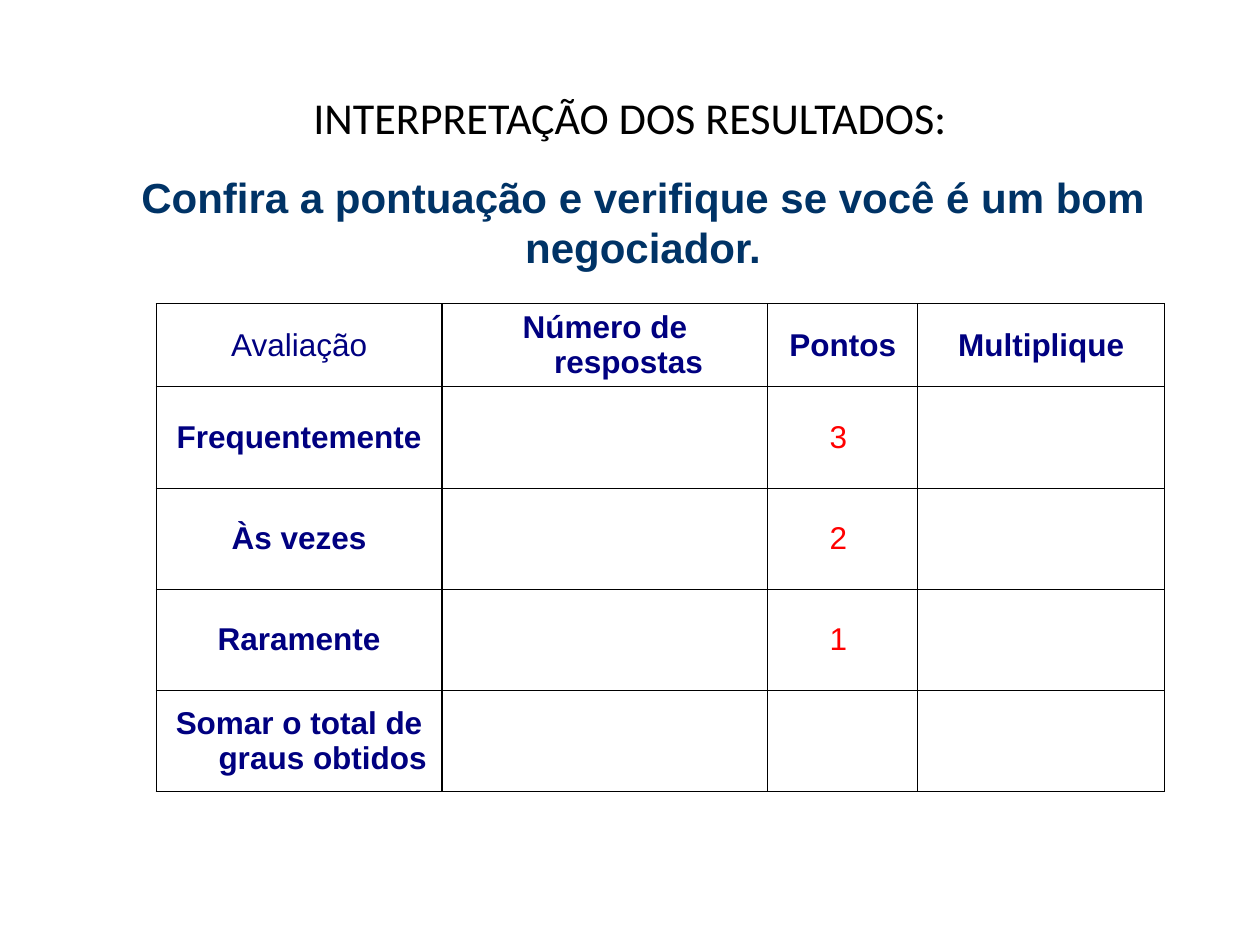
from lxml.etree import SubElement
from pptx import Presentation
from pptx.dml.color import RGBColor
from pptx.enum.text import MSO_ANCHOR as Anchor, PP_ALIGN as Align
from pptx.oxml.ns import qn
from pptx.util import Cm, Pt

BLACK = RGBColor(0x00, 0x00, 0x00)
NAVY = RGBColor(0x00, 0x00, 0x80)
TEAL_BLUE = RGBColor(0x00, 0x33, 0x66)
RED = RGBColor(0xFF, 0x00, 0x00)

TITLE = "INTERPRETAÇÃO DOS RESULTADOS:"
SUBTITLE = "Confira a pontuação e verifique se você é um bom negociador."
ROWS = [
    ("Avaliação", "Número de respostas", "Pontos", "Multiplique"),
    ("Frequentemente", "", "3 ", ""),
    ("Às vezes", "", "2 ", ""),
    ("Raramente", "", "1 ", ""),
    ("Somar o total de\vgraus obtidos ", "", "", ""),
]
COLUMN_WIDTHS = [5.76, 6.57, 3.02, 4.98]
ROW_HEIGHTS = [1.68] + [2.04] * 4
HANGING_INDENT = Cm(0.95)


def style(para, font_name, size, color, bold=False):
    para.alignment = Align.CENTER
    para.font.name = font_name
    para.font.size = Pt(size)
    para.font.bold = bold
    para.font.color.rgb = color


def format_cell(cell):
    """Clear the fill and draw a thin border on all four sides."""
    cell.vertical_anchor = Anchor.MIDDLE
    properties = cell._tc.get_or_add_tcPr()
    for side in ("lnL", "lnR", "lnT", "lnB"):
        line = SubElement(properties, qn(f"a:{side}"), w=str(Pt(0.75)))
        fill = SubElement(line, qn("a:solidFill"))
        SubElement(fill, qn("a:srgbClr"), val=str(BLACK))
    cell.fill.background()


def add_score_table(page):
    frame = page.shapes.add_table(
        len(ROWS), len(COLUMN_WIDTHS), Cm(3.15), Cm(6.12),
        Cm(sum(COLUMN_WIDTHS)), Cm(sum(ROW_HEIGHTS)))
    table = frame.table
    table.first_row = table.horz_banding = False
    for column, width in zip(table.columns, COLUMN_WIDTHS):
        column.width = Cm(width)
    for row, height in zip(table.rows, ROW_HEIGHTS):
        row.height = Cm(height)

    for r, texts in enumerate(ROWS):
        for c, text in enumerate(texts):
            cell = table.cell(r, c)
            format_cell(cell)
            if not text:
                continue
            cell.text = text
            para = cell.text_frame.paragraphs[0]
            is_score = r > 0 and c == 2
            is_corner = r == c == 0
            style(para, "Arial", 18, RED if is_score else NAVY,
                  bold=not (is_score or is_corner))
            indents = para._p.get_or_add_pPr()
            indents.set("marL", str(HANGING_INDENT))
            indents.set("indent", str(-HANGING_INDENT))


def main():
    deck = Presentation()
    deck.slide_width, deck.slide_height = Cm(25.4), Cm(19.05)
    page = deck.slides.add_slide(deck.slide_layouts[5])
    add_score_table(page)

    title = page.shapes.title
    title.left, title.top = Cm(1.27), Cm(0.76)
    title.width, title.height = Cm(22.86), Cm(3.18)
    title.text_frame.text = TITLE
    title.text_frame.vertical_anchor = Anchor.MIDDLE
    style(title.text_frame.paragraphs[0], "Calibri", 25.2, BLACK)

    box = page.shapes.add_textbox(Cm(1.37), Cm(3.33), Cm(23.19), Cm(2.31))
    box.text_frame.word_wrap = True
    box.text_frame.text = SUBTITLE
    style(box.text_frame.paragraphs[0], "Arial", 24, TEAL_BLUE, bold=True)

    deck.save("out.pptx")


if __name__ == "__main__":
    main()
